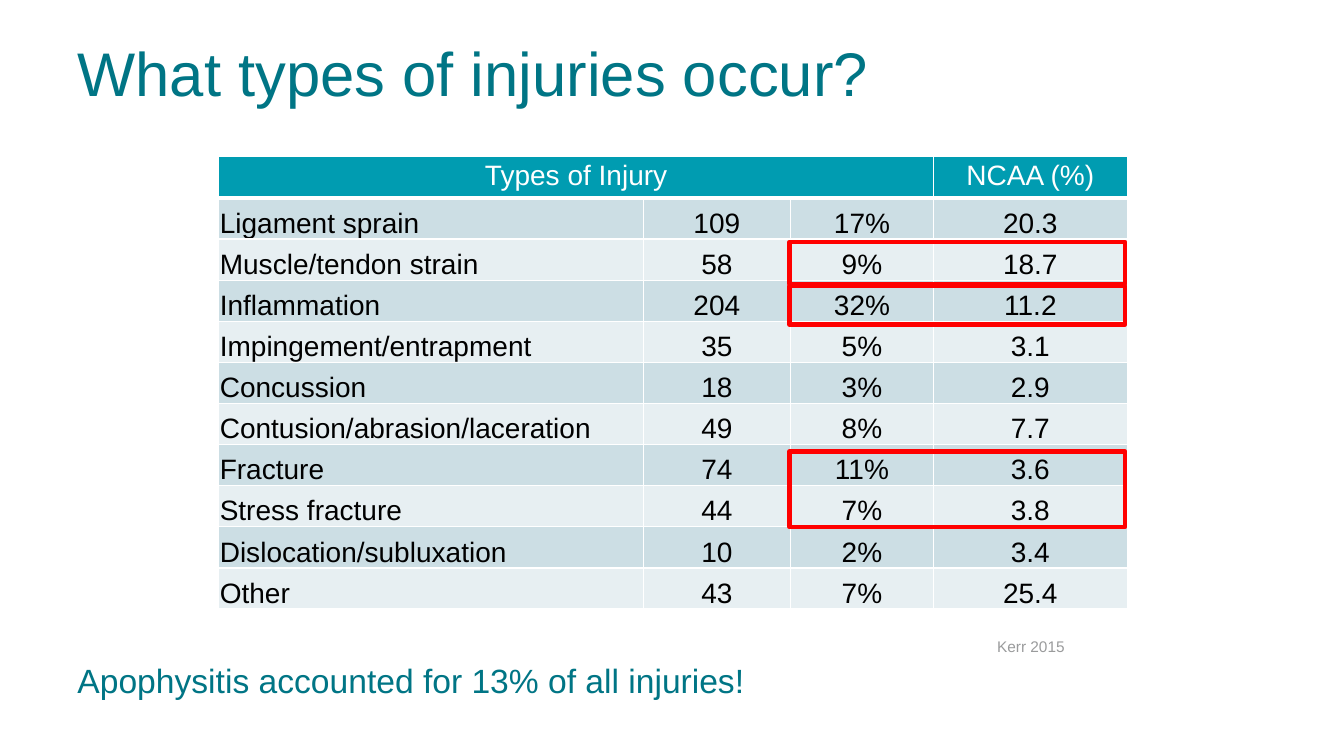
from pptx import Presentation, util as u
from pptx.dml.color import RGBColor
from pptx.enum import shapes, text
from pptx.oxml import parse_xml
from pptx.oxml.ns import nsdecls

TEAL = RGBColor(0x00, 0x75, 0x85)
HEAD = RGBColor(0x00, 0x9C, 0xB1)
BANDS = [RGBColor(0xCC, 0xDE, 0xE4), RGBColor(0xE7, 0xEF, 0xF2)]
WHITE = RGBColor(0xFF, 0xFF, 0xFF)
BLACK = RGBColor(0x00, 0x00, 0x00)
GRAY = RGBColor(0x9A, 0x9B, 0x9C)
RED = RGBColor(0xFF, 0x00, 0x00)

LEFT, CENTER = text.PP_ALIGN.LEFT, text.PP_ALIGN.CENTER
TOP, MIDDLE, BOTTOM = (text.MSO_ANCHOR.TOP, text.MSO_ANCHOR.MIDDLE,
                       text.MSO_ANCHOR.BOTTOM)

WIDTHS = [4.21, 1.46, 1.42, 1.92]
ROWS = [
    ["Types of Injury", "", "", "NCAA (%)"],
    ["Ligament sprain", "109", "17%", "20.3"],
    ["Muscle/tendon strain", "58", "9%", "18.7"],
    ["Inflammation", "204", "32%", "11.2"],
    ["Impingement/entrapment", "35", "5%", "3.1"],
    ["Concussion", "18", "3%", "2.9"],
    ["Contusion/abrasion/laceration", "49", "8%", "7.7"],
    ["Fracture", "74", "11%", "3.6"],
    ["Stress fracture", "44", "7%", "3.8"],
    ["Dislocation/subluxation", "10", "2%", "3.4"],
    ["Other", "43", "7%", "25.4"],
]


class Deck:
    def __init__(self):
        self.prs = Presentation()
        self.prs.slide_width = u.Inches(13.33)
        self.prs.slide_height = u.Inches(7.5)
        self.slide = self.prs.slides.add_slide(self.prs.slide_layouts[6])
        self.font = "Arial"

    def fill_text(self, frame, words, size, color, align):
        frame.text = words
        para = frame.paragraphs[0]
        para.alignment = align
        for run in para.runs:
            run.font.name = self.font
            run.font.size = u.Pt(size)
            run.font.color.rgb = color

    def label(self, box, words, size, color, align=LEFT, anchor=TOP):
        frame = self.slide.shapes.add_textbox(*map(u.Inches, box)).text_frame
        frame.word_wrap = True
        frame.vertical_anchor = anchor
        self.fill_text(frame, words, size, color, align)

    def rule(self, cell, base):
        """Draw white borders on a cell, the bottom one base points wide."""
        props = cell._tc.get_or_add_tcPr()
        for side, width in zip("LRTB", (1, 1, 1, base)):
            props.append(parse_xml(
                f'<a:ln{side} {nsdecls("a")} w="{u.Pt(width)}"><a:solidFill>'
                f'<a:srgbClr val="{WHITE}"/></a:solidFill></a:ln{side}>'))

    def table(self, box, widths, rows):
        grid = self.slide.shapes.add_table(
            len(rows), len(widths), *map(u.Inches, box)).table
        for col, width in zip(grid.columns, widths):
            col.width = u.Inches(width)
        for r, row in enumerate(rows):
            for c, words in enumerate(row):
                cell = grid.cell(r, c)
                self.rule(cell, 1 if r else 3)
                cell.fill.solid()
                cell.fill.fore_color.rgb = BANDS[(r - 1) % 2] if r else HEAD
                cell.margin_top = u.Inches(0.01 if r else 0.04)
                cell.margin_bottom = u.Inches(0 if r else 0.04)
                if r:
                    cell.margin_left = cell.margin_right = u.Inches(0.01)
                cell.vertical_anchor = BOTTOM if r else TOP
                self.fill_text(cell.text_frame, words, 20,
                               BLACK if r else WHITE,
                               LEFT if r and c == 0 else CENTER)
        grid.cell(0, 0).merge(grid.cell(0, 2))

    def frame(self, top, height):
        """Outline the two percentage columns in red."""
        mark = self.slide.shapes.add_shape(
            shapes.MSO_SHAPE.FLOWCHART_PROCESS, u.Inches(7.83), u.Inches(top),
            u.Inches(3.33), u.Inches(height))
        mark.shadow.inherit = False
        mark.fill.background()
        mark.line.color.rgb = RED
        mark.line.width = u.Pt(3)


def main():
    deck = Deck()
    deck.label((0.67, 0.3, 12, 1.25), "What types of injuries occur?", 44, TEAL)
    deck.table((2.17, 1.55, 9.01, 4.49), WIDTHS, ROWS)
    deck.label((0.67, 6.5, 7.33, 0.5),
               "Apophysitis accounted for 13% of all injuries!", 24, TEAL)
    deck.label((9.58, 6.21, 1.29, 0.4), "Kerr 2015", 11, GRAY, CENTER, MIDDLE)
    for top, height in [(2.4, 0.42), (4.48, 0.75), (2.84, 0.38)]:
        deck.frame(top, height)
    deck.prs.save("out.pptx")


if __name__ == "__main__":
    main()
